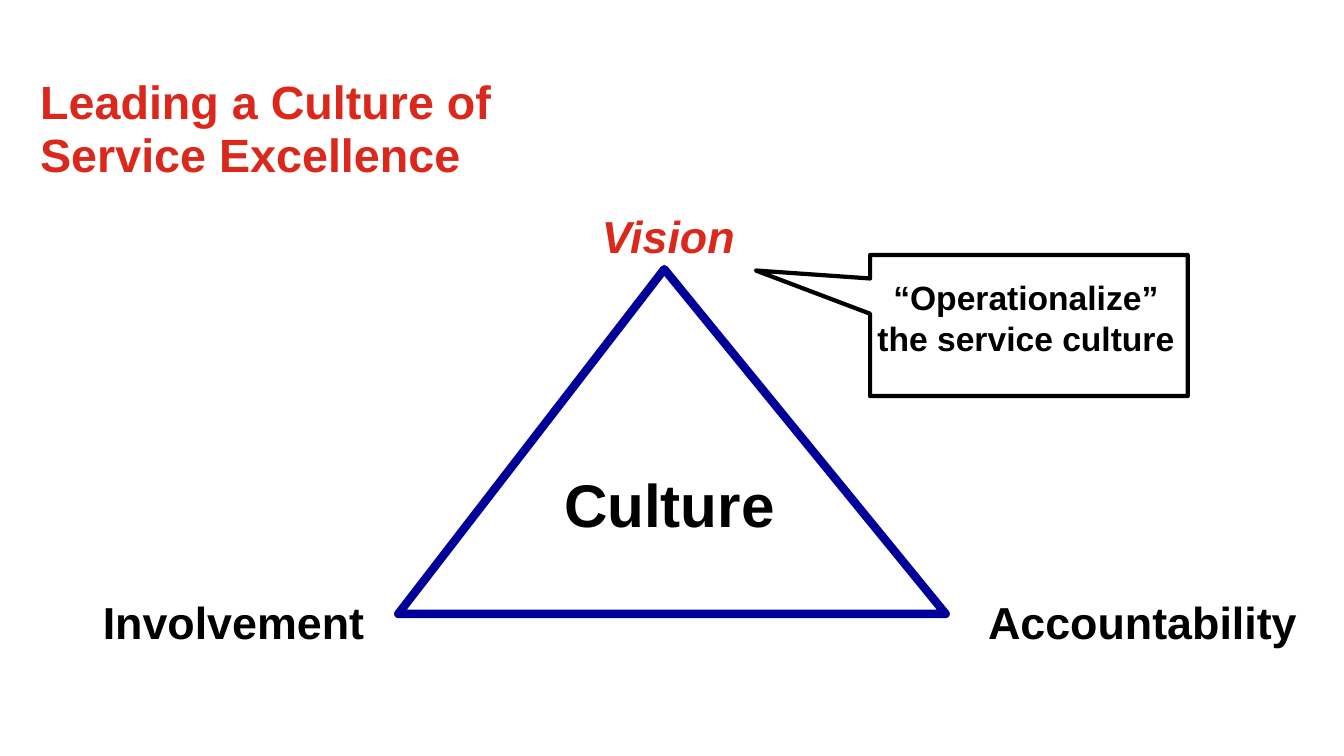
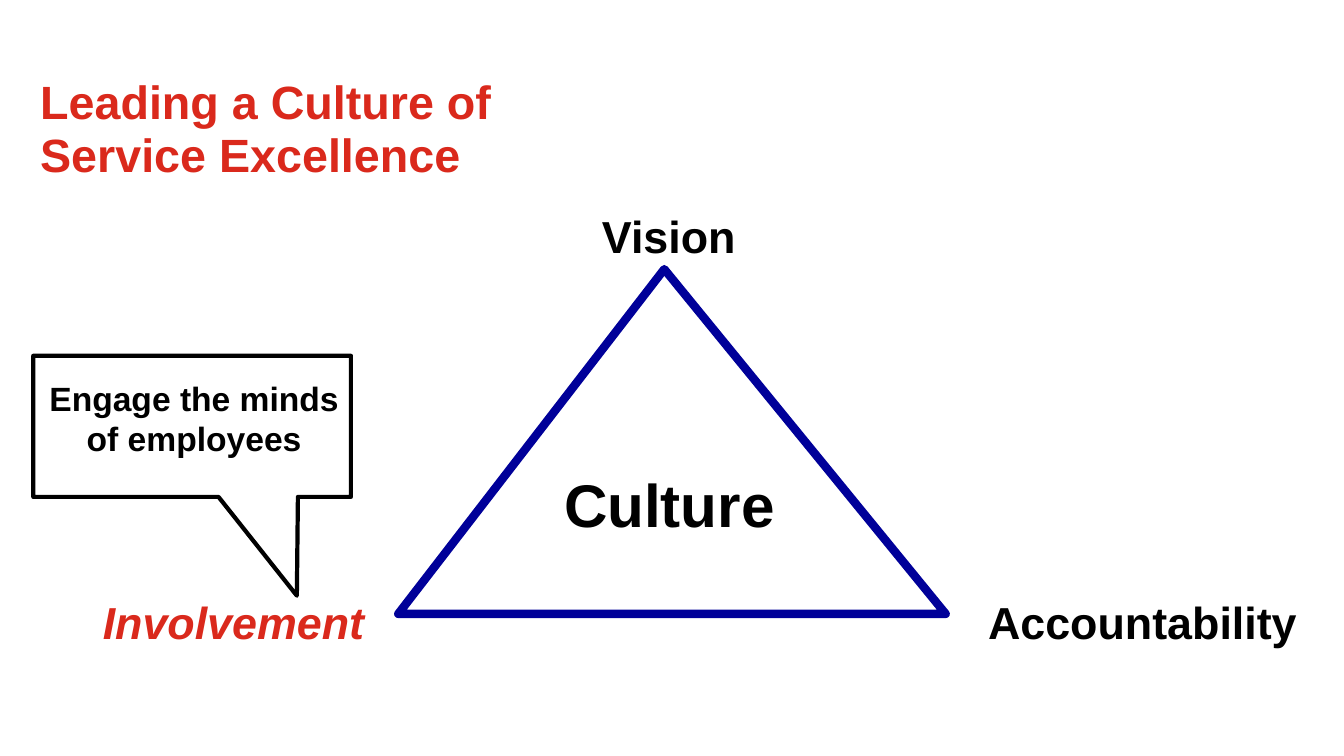
from pptx import Presentation
from pptx.dml.color import RGBColor
from pptx.enum.shapes import MSO_SHAPE
from pptx.enum.text import MSO_ANCHOR, PP_ALIGN
from pptx.util import Inches, Pt

TRIANGLE, CALLOUT = MSO_SHAPE.ISOSCELES_TRIANGLE, MSO_SHAPE.RECTANGULAR_CALLOUT
LEFT, CENTER, TOP = PP_ALIGN.LEFT, PP_ALIGN.CENTER, MSO_ANCHOR.TOP

COLORS = {"accent": "DA291C", "text": "000000", "triangle": "000099", "paper": "FFFFFF"}
FONT = "Arial"

# "\v" marks a line break; boxes are left, top, width, height in inches
TITLE = "Leading a Culture of\vService Excellence"
TITLE_BOX = (0.3, 0.71, 10.78, 1.11)
TRIANGLE_BOX = (3.95, 2.67, 5.43, 3.42)
CENTER_LABEL = ("Culture", (5.46, 4.57, 2.36, 0.85))
CORNERS = [
    ("Vision", (5.84, 2, 1.71, 0.67)),
    ("Accountability", (9.67, 5.83, 3.4, 0.67)),
    ("Involvement", (0.89, 5.83, 3, 0.67)),
]
CALLOUT_SIZE = (3.15, 1.4)
SLIDES = [
    {"focus": "Vision", "note": "“Operationalize”\vthe service culture",
     "at": (8.63, 2.53), "tip": (-0.86, -0.39), "shift": -0.03},
    {"focus": "Involvement", "note": "Engage the minds\vof employees",
     "at": (0.33, 3.53), "tip": (0.33, 1.2), "shift": 0.02},
]


def rgb(name):
    return RGBColor.from_string(COLORS[name])


def write(sp, text, size, color="text", italic=False, align=LEFT,
          margins=(0.13, 0.07, 0.13, 0.07), wrap=True, spacing=1.0):
    tf = sp.text_frame
    tf.word_wrap, tf.vertical_anchor = wrap, TOP
    tf.margin_left, tf.margin_top, tf.margin_right, tf.margin_bottom = map(Inches, margins)
    p = tf.paragraphs[0]
    p.text, p.alignment, p.line_spacing = text, align, spacing
    for r in p.runs:
        r.font.name, r.font.size = FONT, Pt(size)
        r.font.bold, r.font.italic = True, italic
        r.font.color.rgb = rgb(color)


def add_text(s, text, box, size, **fmt):
    write(s.shapes.add_textbox(*map(Inches, box)), text, size, **fmt)


def add_outline(s, kind, box, adjustments, line, width, fill=None):
    sp = s.shapes.add_shape(kind, *map(Inches, box))
    sp.shadow.inherit = False
    for i, value in enumerate(adjustments):
        sp.adjustments[i] = value
    if fill:
        sp.fill.solid()
        sp.fill.fore_color.rgb = rgb(fill)
    else:
        sp.fill.background()
    sp.line.color.rgb, sp.line.width = rgb(line), Pt(width)
    return sp


def add_slide(prs, focus, note, at, tip, shift):
    """Draw the culture triangle with one corner stressed and explained."""
    s = prs.slides.add_slide(prs.slide_layouts[6])
    add_text(s, TITLE, TITLE_BOX, 33.3, color="accent", spacing=0.95,
             margins=(0.1, 0.05, 0.1, 0.05))
    add_outline(s, TRIANGLE, TRIANGLE_BOX, [0.486], "triangle", 6)
    for label, box in CORNERS:
        stressed = label == focus
        add_text(s, label, box, 32, color="accent" if stressed else "text", italic=stressed)
    add_text(s, *CENTER_LABEL, 43, align=CENTER)
    callout = add_outline(s, CALLOUT, at + CALLOUT_SIZE, tip, "text", 3, fill="paper")
    write(callout, note, 24, align=CENTER, wrap=False,
          margins=(0.05 + shift, 0.22, 0.05 - shift, 0.05))


def main():
    prs = Presentation()
    prs.slide_width, prs.slide_height = Inches(13.33), Inches(7.5)
    for content in SLIDES:
        add_slide(prs, **content)
    prs.save("out.pptx")


if __name__ == "__main__":
    main()
